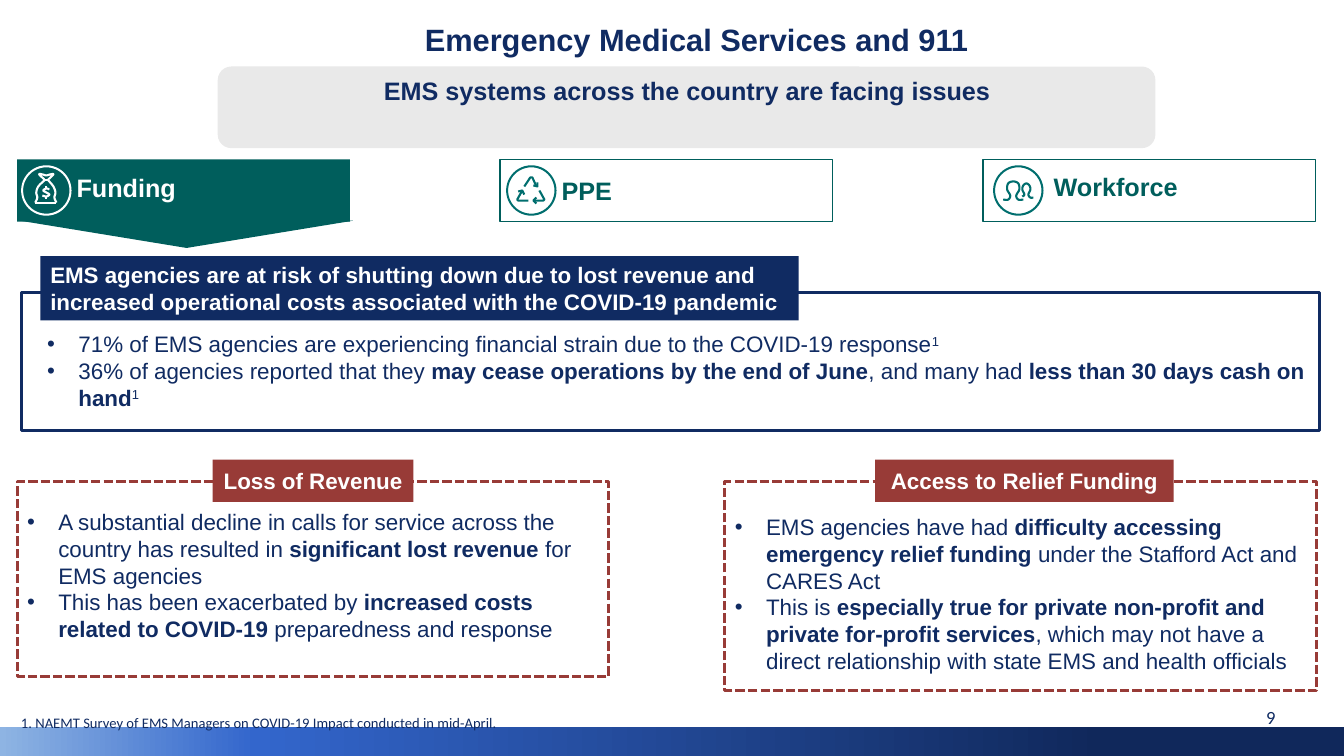
"""Build the slide on emergency medical services and 911."""
from copy import deepcopy
from dataclasses import dataclass

from pptx import Presentation
from pptx.dml.color import RGBColor
from pptx.enum.dml import MSO_LINE
from pptx.enum.shapes import MSO_SHAPE
from pptx.enum.text import MSO_ANCHOR, PP_ALIGN
from pptx.oxml import parse_xml
from pptx.oxml.ns import nsdecls, qn
from pptx.util import Inches, Pt

RECT, ROUND = MSO_SHAPE.RECTANGLE, MSO_SHAPE.ROUNDED_RECTANGLE
PEAK, RING = MSO_SHAPE.ISOSCELES_TRIANGLE, MSO_SHAPE.DONUT
DASH = MSO_LINE.SQUARE_DOT
TOP, MID = MSO_ANCHOR.TOP, MSO_ANCHOR.MIDDLE
LEFT, MIDST, RIGHT = PP_ALIGN.LEFT, PP_ALIGN.CENTER, PP_ALIGN.RIGHT


@dataclass(frozen=True)
class Theme:
    navy: str = "102B62"
    teal: str = "005E5C"
    sea: str = "006E6E"
    red: str = "983B37"
    gray: str = "E9E9E9"
    white: str = "FFFFFF"
    band: tuple = ((0, "8EB4E3"), (0.19, "3366CC"), (0.82, "10285B"))
    font: str = "Arial"
    small: str = "Calibri"
    title: float = 22
    head: float = 18
    body: float = 16
    page: float = 13.3
    thick: float = 2.25
    thin: float = 1
    pen: float = 1.5


def tint(code):
    return RGBColor.from_string(code)


class Deck:
    def __init__(self, theme, wide, high, cell):
        self.theme, self.cell = theme, cell
        self.file = Presentation()
        self.file.slide_width, self.file.slide_height = wide, high
        self.slide = self.file.slides.add_slide(self.file.slide_layouts[6])

    def grid(self, *cells):
        return [round(c * self.cell) for c in cells]

    def shape(self, kind, box, fill=None, line=None, width=None, dash=None):
        item = self.slide.shapes.add_shape(kind, *self.grid(*box))
        self.paint(item, fill, line, width, dash)
        return item

    def paint(self, item, fill, line, width, dash=None):
        item.shadow.inherit = False
        if fill:
            item.fill.solid()
            item.fill.fore_color.rgb = tint(fill)
        else:
            item.fill.background()
        if line:
            item.line.color.rgb = tint(line)
            item.line.width = Pt(width)
            if dash:
                item.line.dash_style = dash
        else:
            item.line.fill.background()

    def band(self, box, stops):
        item = self.shape(RECT, box)
        item.fill.gradient()
        item.fill.gradient_angle = 0
        marks = item._element.spPr.find(".//" + qn("a:gsLst"))
        marks.append(deepcopy(marks[0]))
        for stop, (place, code) in zip(item.fill.gradient_stops, stops):
            stop.position = place
            stop.color.rgb = tint(code)

    def text(self, box, lines, **style):
        item = self.slide.shapes.add_textbox(*self.grid(*box))
        self.label(item, lines, **style)

    def label(self, item, lines, color=None, size=None, font=None, bold=False,
              align=LEFT, anchor=TOP, inset=(1, 0.5), dots=False):
        frame = item.text_frame
        frame.word_wrap = True
        frame.vertical_anchor = anchor
        side, edge = self.grid(*inset)
        frame.margin_left = frame.margin_right = side
        frame.margin_top = frame.margin_bottom = edge
        for spot, runs in enumerate(lines):
            para = frame.add_paragraph() if spot else frame.paragraphs[0]
            para.alignment = align
            if dots:
                self.bullet(para)
            for words, mark in runs:
                run = para.add_run()
                run.text = words
                run.font.name = font or self.theme.font
                run.font.size = Pt(size or self.theme.body)
                run.font.bold = bold or mark == "bold"
                run.font.color.rgb = tint(color or self.theme.navy)
                if mark == "raise":
                    run._r.get_or_add_rPr().set("baseline", "30000")

    def bullet(self, para):
        props = para._p.get_or_add_pPr()
        hang = self.grid(3.1)[0]
        props.set("marL", str(hang))
        props.set("indent", str(-hang))
        props.append(parse_xml(f'<a:buFont {nsdecls("a")} typeface="Arial"/>'))
        props.append(parse_xml(f'<a:buChar {nsdecls("a")} char="•"/>'))

    def icon(self, left, top, strokes, color, steps):
        ring = self.shape(RING, (left, top, 5, 5), color)
        ring.adjustments[0] = 0.04
        for stroke in strokes:
            dots = [self.grid(left + x / 10, top + y / 10)
                    for x, y in self.curve(stroke, steps)]
            maker = self.slide.shapes.build_freeform(*dots[0], scale=1)
            maker.add_line_segments(dots[1:], close=False)
            self.paint(maker.convert_to_shape(), None, color, self.theme.pen)

    def curve(self, dots, steps):
        ends = [dots[0], *dots, dots[-1]]
        track = [dots[0]]
        for a, b, c, d in zip(ends, ends[1:], ends[2:], ends[3:]):
            for step in range(1, steps + 1):
                t = step / steps
                track.append(tuple(
                    q + t * (r - p + t * (2 * p - 5 * q + 4 * r - s
                                          + t * (3 * q - p - 3 * r + s))) / 2
                    for p, q, r, s in zip(a, b, c, d)))
        return track


BAG = [
    [(23, 15), (17, 21), (15, 27), (16, 32), (14, 37)], [(14, 37), (35, 37)],
    [(35, 37), (33, 32), (34, 27), (32, 21), (27, 15)], [(23, 15), (27, 15)],
    [(23, 14), (18, 9), (21, 9), (25, 10), (29, 9), (32, 9), (27, 14)],
    [(28, 24), (25, 23), (22, 25), (25, 27), (28, 29), (25, 31), (21, 30)],
    [(25, 21), (25, 23)], [(25, 31), (25, 33)]]
CYCLE = [
    [(18, 21), (24, 12), (26, 12), (30, 21)], [(27, 20), (31, 21), (31, 17)],
    [(22, 35), (12, 35), (11, 34), (16, 25)], [(12, 26), (16, 25), (18, 29)],
    [(33, 25), (38, 34), (37, 35), (28, 35)], [(30, 38), (27, 35), (30, 32)]]
CREW = [
    [(10, 34), (15, 34), (17, 30), (14, 24), (15, 18), (20, 16), (25, 18),
     (26, 24), (23, 30), (25, 34), (30, 34)],
    [(29, 31), (31, 29), (29, 24), (30, 20), (33, 18), (36, 20), (37, 24),
     (35, 29), (37, 32), (40, 32)]]

LOSS = [
    [("A substantial decline in calls for service across the country has resulted in ", ""),
     ("significant lost revenue ", "bold"), ("for EMS agencies", "")],
    [("This has been exacerbated by ", ""),
     ("increased costs related to COVID-19", "bold"),
     (" preparedness and response", "")]]
RELIEF = [
    [("EMS agencies have had ", ""),
     ("difficulty accessing emergency relief funding ", "bold"),
     ("under the Stafford Act and CARES Act", "")],
    [("This is ", ""),
     ("especially true for private non-profit and private for-profit services", "bold"),
     (", which may not have a direct relationship with state EMS and health officials", "")]]
RISK = [
    [("71% of EMS agencies are experiencing financial strain due to the COVID-19 response", ""),
     ("1", "raise")],
    [("36% of agencies reported that they ", ""),
     ("may cease operations by the end of June", "bold"), (", and many had ", ""),
     ("less than 30 days cash on hand", "bold"), ("1", "raise")]]


def main():
    look = Theme()
    deck = Deck(look, Inches(13.33), Inches(7.5), Inches(0.1))
    deck.band((0, 72.1, 133.3, 2.9), look.band)
    deck.text((120, 69.7, 7.8, 2.8), [[("9", "")]], size=look.page,
              font=look.small, align=RIGHT, anchor=MID, inset=(1.3, 0.7))

    deck.shape(PEAK, (2, 21.9, 33, 2.7), look.teal).rotation = 180
    tabs = [("Funding", BAG, 0.4, 5.9, 18.55, 8), ("PPE", CYCLE, 0.6, 6.1, 18.85, 1),
            ("Workforce", CREW, 1, 7, 18.5, 8)]
    for spot, (name, icon, shift, gap, mid, steps) in enumerate(tabs):
        left, live = 1.7 + 47.9 * spot, spot == 0
        deck.shape(RECT, (left, 15.8, 33, 6.2), look.teal if live else None,
                   None if live else look.teal, look.thin)
        deck.icon(left + shift, 16.4, icon, look.white if live else look.sea, steps)
        deck.text((left + gap, mid - 2, 25, 4), [[(name, "")]], size=look.head,
                  color=look.white if live else look.teal, bold=True,
                  anchor=MID, inset=(0, 0))

    deck.shape(RECT, (2.1, 29, 128.8, 13.7), None, look.navy, look.thick)
    claim = deck.shape(RECT, (4, 25.4, 75.2, 6.4), look.navy)
    deck.label(claim, [[("EMS agencies are at risk of shutting down due to lost revenue and "
                         "increased operational costs associated with the COVID-19 pandemic", "")]],
               color=look.white, bold=True)
    deck.text((3.7, 32.3, 127.6, 9.1), RISK, dots=True)

    cards = [("Loss of Revenue", LOSS, 19.3, 49.9, 19.4, 19.9),
             ("Access to Relief Funding", RELIEF, 20.7, 50.4, 14.9, 29.6)]
    for spot, (name, lines, high, top, shift, wide) in enumerate(cards):
        left = 1.7 + 70.2 * spot
        deck.shape(RECT, (left, 47.8, 58.7, high), None, look.red, look.thick, DASH)
        deck.text((left, top, 58.7, high - 3.5), lines, dots=True)
        head = deck.shape(RECT, (left + shift, 45.6, wide, 4.2), look.red)
        deck.label(head, [[(name, "")]], color=look.white, bold=True,
                   align=MIDST, anchor=MID)

    deck.shape(ROUND, (21.6, 6.6, 93, 8.1), look.gray)
    deck.text((27.4, 7, 81.5, 4), [[("EMS systems across the country are facing issues", "")]],
              size=look.head, bold=True, align=MIDST)
    deck.text((34.1, 1.6, 70, 4.7), [[("Emergency Medical Services and 911", "")]],
              size=look.title, bold=True, align=MIDST)
    deck.text((1.1, 70, 56.8, 3), [[("1. NAEMT Survey of EMS Managers on COVID-19 Impact "
                                    "conducted in mid-April.", "raise")]],
              size=look.head, font=look.small)
    deck.file.save("out.pptx")


if __name__ == "__main__":
    main()
